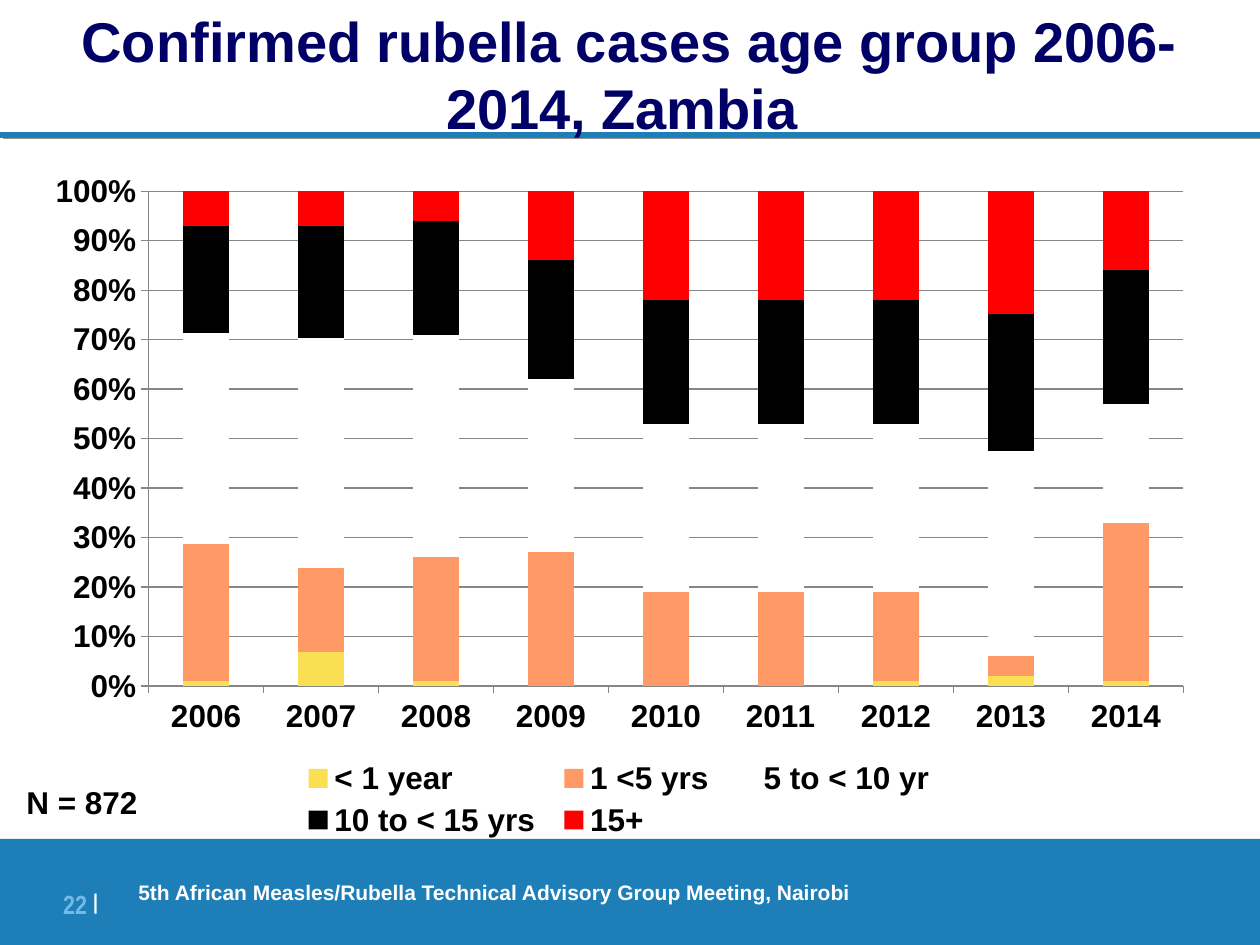
"""Build a slide charting confirmed rubella cases in Zambia by age group."""
from dataclasses import dataclass

from lxml import etree
from pptx import Presentation
from pptx import util as u
from pptx.chart.data import CategoryChartData
from pptx.dml.color import RGBColor
from pptx.enum import chart as charts, shapes, text
from pptx.oxml.ns import qn

SCALE = u.Inches(1) / 126
WHITE = RGBColor(0xFF, 0xFF, 0xFF)
BLACK = RGBColor(0, 0, 0)
BLUE = RGBColor(0x1E, 0x7F, 0xB8)
SKY = RGBColor(0x72, 0xBB, 0xE8)
NAVY = RGBColor(0, 0, 0x66)
GRAY = RGBColor(0x96, 0x96, 0x96)
GRID = RGBColor(0x86, 0x86, 0x86)
YELLOW = RGBColor(0xFB, 0xDF, 0x53)
ORANGE = RGBColor(0xFF, 0x99, 0x66)
RED = RGBColor(0xFF, 0, 0)


@dataclass
class AgeGroup:
    name: str
    shares: tuple[int, ...]
    color: RGBColor


AGE_GROUPS = [
    AgeGroup("< 1 year", (1, 7, 1, 0, 0, 0, 1, 2, 1), YELLOW),
    AgeGroup("1 <5 yrs", (28, 17, 25, 27, 19, 19, 18, 4, 32), ORANGE),
    AgeGroup("5 to < 10 yr", (43, 47, 45, 35, 34, 34, 34, 42, 24), WHITE),
    AgeGroup("10 to < 15 yrs", (22, 23, 23, 24, 25, 25, 25, 28, 27), BLACK),
    AgeGroup("15+", (7, 7, 6, 14, 22, 22, 22, 25, 16), RED),
]


def px(*lengths: int) -> list[int]:
    return [round(length * SCALE) for length in lengths]


def add_shadow(properties, color: RGBColor, distance: float, angle: int):
    effects = etree.SubElement(properties, qn("a:effectLst"))
    shadow = etree.SubElement(effects, qn("a:outerShdw"), dist=str(u.Pt(distance)),
                              dir=str(angle * 60000), algn="ctr", rotWithShape="0")
    etree.SubElement(shadow, qn("a:srgbClr"), val=str(color))
    return effects


def add_span(para, words: str, *, size: int, color: RGBColor, font: str = "Arial"):
    span = para.add_run()
    span.text = words
    span.font.size = u.Pt(size)
    span.font.bold = True
    span.font.color.rgb = color
    span.font.name = font
    return span


def write(box, words: str, *, size: int, color: RGBColor, font: str = "Arial",
          align=text.PP_ALIGN.LEFT, anchor=text.MSO_ANCHOR.TOP, inset: bool = True):
    frame = box.text_frame
    frame.word_wrap = True
    frame.vertical_anchor = anchor
    if not inset:
        frame.margin_left = frame.margin_right = frame.margin_top = frame.margin_bottom = 0
    para = frame.paragraphs[0]
    para.alignment = align
    return add_span(para, words, size=size, color=color, font=font)


def set_layout(element, position: int, **fractions: float) -> None:
    for old in element.findall(qn("c:layout")):
        element.remove(old)
    layout = etree.Element(qn("c:layout"))
    manual = etree.SubElement(layout, qn("c:manualLayout"))
    if element.tag == qn("c:plotArea"):
        etree.SubElement(manual, qn("c:layoutTarget"), val="inner")
    for mode in ("xMode", "yMode"):
        etree.SubElement(manual, qn(f"c:{mode}"), val="edge")
    for name, value in fractions.items():
        etree.SubElement(manual, qn(f"c:{name}"), val=str(value))
    element.insert(position, layout)


def add_age_chart(page) -> None:
    data = CategoryChartData(number_format="0")
    data.categories = [str(year) for year in range(2006, 2015)]
    for group in AGE_GROUPS:
        data.add_series(group.name, group.shares)
    chart = page.shapes.add_chart(charts.XL_CHART_TYPE.COLUMN_STACKED_100,
                                  *px(31, 157, 1176, 687), data).chart
    chart.has_title = False
    chart.font.name = "Arial"
    chart.font.size = u.Pt(18)
    chart.font.bold = True
    chart.font.color.rgb = BLACK

    plot = chart.plots[0]
    plot.gap_width = 150
    plot.overlap = 100
    plot.vary_by_categories = False
    for series, group in zip(plot.series, AGE_GROUPS):
        series.format.fill.solid()
        series.format.fill.fore_color.rgb = group.color

    for axis in (chart.category_axis, chart.value_axis):
        axis.major_tick_mark = charts.XL_TICK_MARK.OUTSIDE
        axis.format.line.color.rgb = GRID
    values = chart.value_axis
    values.minimum_scale, values.maximum_scale, values.major_unit = 0, 1, 0.1
    values.has_major_gridlines = True
    values.major_gridlines.format.line.color.rgb = GRID
    values.tick_labels.number_format = "0%"
    values.tick_labels.number_format_is_linked = False

    chart.has_legend = True
    chart.legend.position = charts.XL_LEGEND_POSITION.BOTTOM
    chart.legend.include_in_layout = False
    plot_area = chart.element.find(f".//{qn('c:plotArea')}")
    legend = chart.element.find(f".//{qn('c:legend')}")
    set_layout(plot_area, 0, x=0.1, y=0.05, w=0.88, h=0.72)
    set_layout(legend, 1, x=0.22, y=0.87, w=0.56, h=0.13)


def add_frame(page) -> None:
    left, top, right = px(0, 135, 1260)
    rule = page.shapes.add_connector(shapes.MSO_CONNECTOR.STRAIGHT, left, top, right, top)
    rule.line.color.rgb = BLUE
    rule.line.width = u.Pt(3)
    add_shadow(rule._element.spPr, GRAY, 2.2, 27)

    footer = page.shapes.add_shape(shapes.MSO_SHAPE.RECTANGLE, *px(0, 839, 1260, 106))
    footer.shadow.inherit = False
    footer.fill.solid()
    footer.fill.fore_color.rgb = BLUE
    footer.line.fill.background()
    write(footer, "5th African Measles/Rubella Technical Advisory Group Meeting, Nairobi",
          size=12, color=WHITE, anchor=text.MSO_ANCHOR.MIDDLE)
    footer.text_frame.paragraphs[0]._p.get_or_add_pPr().set("marL", str(u.Inches(1)))

    number = page.shapes.add_textbox(*px(49, 878, 49, 45))
    write(number, "22 ", size=15, color=SKY, font="Arial Narrow",
          align=text.PP_ALIGN.RIGHT, inset=False)
    bar = add_span(number.text_frame.paragraphs[0], "|", size=21, color=WHITE,
                   font="Arial Narrow")
    bar.font._element.set("baseline", "14000")


def main() -> None:
    deck = Presentation()
    deck.slide_width, deck.slide_height = px(1260, 945)
    page = deck.slides.add_slide(deck.slide_layouts[6])
    add_frame(page)
    title = page.shapes.add_textbox(*px(0, 0, 1260, 147))
    span = write(title, "Confirmed rubella cases age group 2006-2014, Zambia ", size=32,
                 color=NAVY, align=text.PP_ALIGN.CENTER, anchor=text.MSO_ANCHOR.MIDDLE)
    effects = add_shadow(span.font._element, SKY, 2, 45)
    span.font._element.find(qn("a:solidFill")).addnext(effects)
    add_age_chart(page)
    total = page.shapes.add_textbox(*px(14, 777, 154, 50))
    write(total, "N = 872", size=18, color=BLACK)
    deck.save("out.pptx")


if __name__ == "__main__":
    main()
